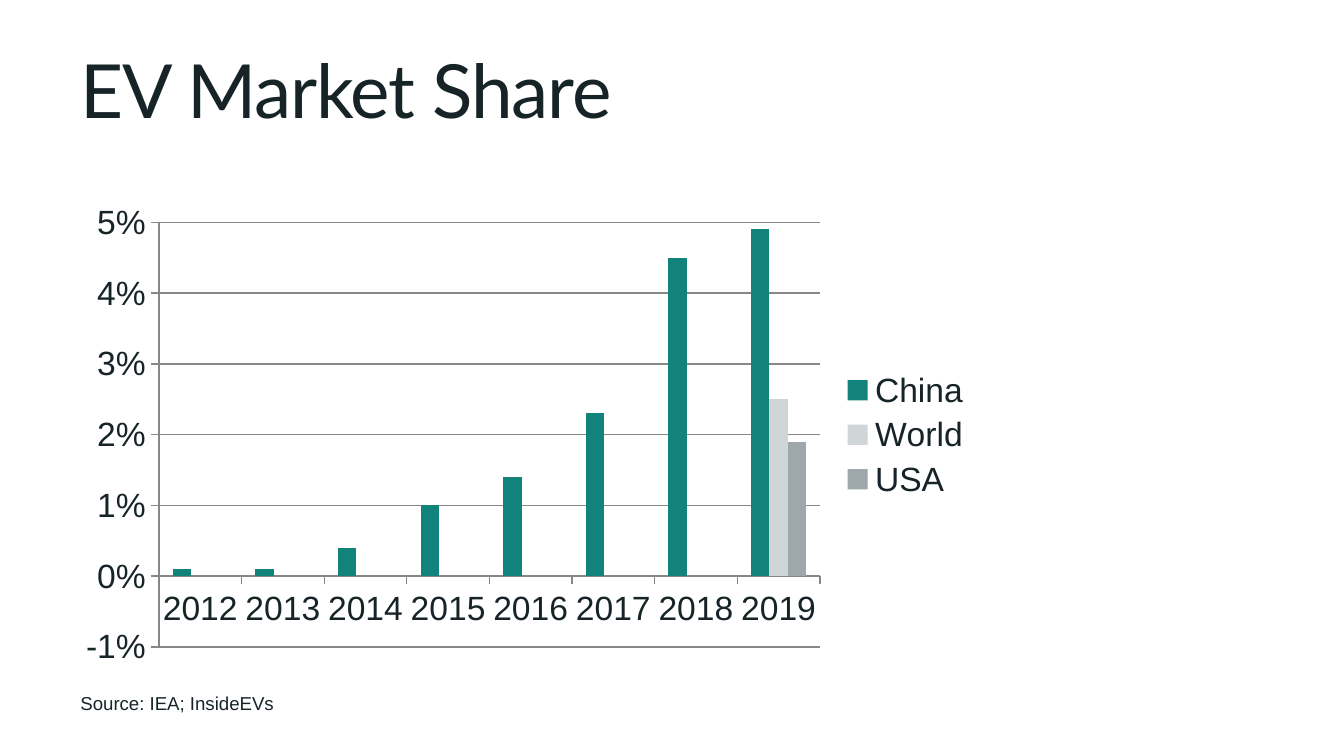
from dataclasses import dataclass

from lxml import etree
from pptx import Presentation
from pptx import util as u
from pptx.chart.data import CategoryChartData
from pptx.dml.color import RGBColor
from pptx.enum import chart as ch, text
from pptx.oxml import parse_xml
from pptx.oxml.ns import nsdecls


@dataclass(frozen=True)
class Theme:
    ink: str = "172427"
    rule: str = "878787"
    series: tuple = ("11837A", "D0D5D8", "9EA7AA")
    heading: str = "Lato"
    body: str = "Arial"
    title_pt: int = 40
    chart_pt: int = 18
    note_pt: int = 10


class Deck:
    """Holds the theme and current slide; boxes are on a 20-column, 100-row grid."""

    COLS, ROWS = 20, 100

    def __init__(self, theme):
        self.theme = theme
        self.prs = Presentation()
        self.prs.slide_width = u.Inches(10)
        self.prs.slide_height = self.prs.slide_width * 9 // 16
        self.s = self.prs.slides.add_slide(self.prs.slide_layouts[5])

    def box(self, col, row, cols, rows):
        w, h = self.prs.slide_width / self.COLS, self.prs.slide_height / self.ROWS
        return [u.Emu(round(v)) for v in (col * w, row * h, cols * w, rows * h)]

    def style(self, font, name, size):
        font.name, font.size = name, u.Pt(size)
        font.color.rgb = RGBColor.from_string(self.theme.ink)

    def title(self, words, box):
        sp = self.s.shapes.title
        sp.left, sp.top, sp.width, sp.height = self.box(*box)
        tf = sp.text_frame
        tf.vertical_anchor = text.MSO_ANCHOR.BOTTOM
        p = tf.paragraphs[0]
        p.alignment = text.PP_ALIGN.LEFT
        r = p.add_run()
        r.text = words
        self.style(r.font, self.theme.heading, self.theme.title_pt)
        r.font._element.set("spc", "-60")

    def note(self, words, box):
        tf = self.s.shapes.add_textbox(*self.box(*box)).text_frame
        tf.word_wrap = False
        tf.auto_size = text.MSO_AUTO_SIZE.SHAPE_TO_FIT_TEXT
        r = tf.paragraphs[0].add_run()
        r.text = words
        self.style(r.font, self.theme.body, self.theme.note_pt)

    def rule(self, line):
        line.color.rgb = RGBColor.from_string(self.theme.rule)
        line.width = u.Pt(0.75)

    def columns(self, cats, series, box, limits, plot_area):
        data = CategoryChartData(number_format="0%")
        data.categories = cats
        for name, values in series.items():
            data.add_series(name, values)
        kind = ch.XL_CHART_TYPE.COLUMN_CLUSTERED
        chart = self.s.shapes.add_chart(kind, *self.box(*box), data).chart
        chart.has_title = False
        self.style(chart.font, self.theme.body, self.theme.chart_pt)

        # Columns
        plot = chart.plots[0]
        plot.gap_width, plot.overlap, plot.vary_by_categories = 150, 0, False
        for ser, color in zip(plot.series, self.theme.series):
            ser.format.fill.solid()
            ser.format.fill.fore_color.rgb = RGBColor.from_string(color)

        # Axes and gridlines
        for axis in (chart.category_axis, chart.value_axis):
            axis.major_tick_mark = ch.XL_TICK_MARK.OUTSIDE
            axis.minor_tick_mark = ch.XL_TICK_MARK.NONE
            self.rule(axis.format.line)
        axis = chart.value_axis
        axis.minimum_scale, axis.maximum_scale, axis.major_unit = limits
        axis.has_major_gridlines = True
        self.rule(axis.major_gridlines.format.line)
        axis.tick_labels.number_format = "0%"
        axis.tick_labels.number_format_is_linked = False

        # Legend
        chart.has_legend = True
        chart.legend.position = ch.XL_LEGEND_POSITION.RIGHT
        chart.legend.include_in_layout = False

        # Inner plot area, as shares of the chart
        area = chart._chartSpace.chart.plotArea
        for old in area.xpath("c:layout"):
            area.remove(old)
        layout = parse_xml(f"<c:layout {nsdecls('c')}><c:manualLayout/></c:layout>")
        ns = layout.nsmap["c"]
        settings = [("layoutTarget", "inner"), ("xMode", "edge"), ("yMode", "edge")]
        for tag, val in settings + list(zip("xywh", plot_area)):
            etree.SubElement(layout[0], f"{{{ns}}}{tag}").set("val", str(val))
        area.insert(0, layout)


def main():
    deck = Deck(Theme())
    deck.title("EV Market Share", (1, 2.3, 12.66, 16.2))

    years = [str(y) for y in range(2012, 2020)]
    earlier = [None] * (len(years) - 1)
    shares = {
        "China": [0.001, 0.001, 0.004, 0.01, 0.014, 0.023, 0.045, 0.049],
        "World": earlier + [0.025],
        "USA": earlier + [0.019],
    }
    deck.columns(years, shares, box=(1, 25.6, 13.66, 63.82),
                 limits=(-0.01, 0.05, 0.01), plot_area=(0.1, 0.06, 0.72, 0.88))

    deck.note("Source: IEA; InsideEVs", (1, 90.67, 3.3, 4.8))
    deck.prs.save("out.pptx")


if __name__ == "__main__":
    main()
